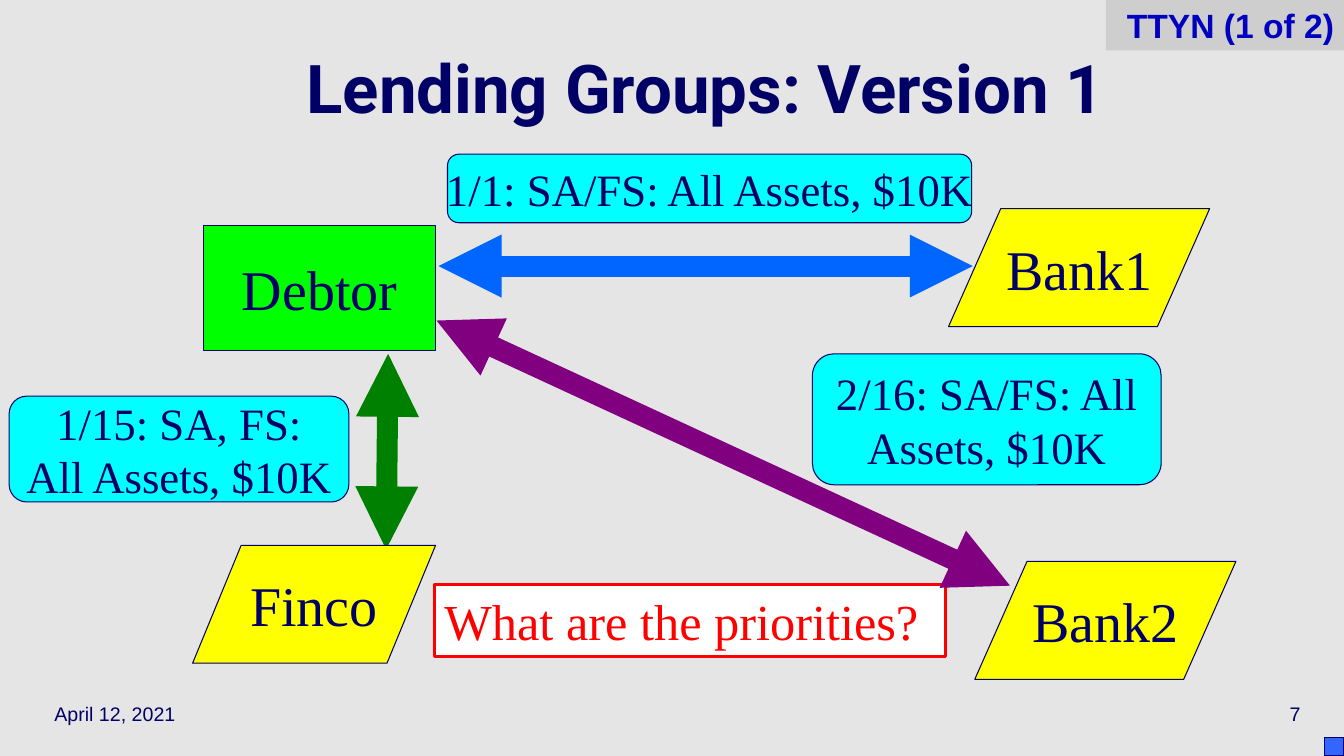
from lxml import etree
from pptx import Presentation
from pptx.dml.color import RGBColor
from pptx.enum import shapes, text
from pptx.oxml.ns import qn
from pptx.util import Inches, Pt

WIDTH, HEIGHT = Inches(13.333), Inches(7.5)
COLORS = {
    "background": "E5E5E5", "tab": "CECECE", "navy": "000066",
    "yellow": "FFFF00", "lime": "00FF00", "cyan": "00FFFF",
    "white": "FFFFFF", "red": "FF0000", "corner": "3366FF",
    "blue": "0066FF", "purple": "800080", "green": "008000",
    "tab text": "0000C0",
}
SERIF, SANS, TITLE = "Times New Roman", "Arial", "Roboto"
LEFT, CENTER, RIGHT = text.PP_ALIGN.LEFT, text.PP_ALIGN.CENTER, text.PP_ALIGN.RIGHT
PARTY_SHAPE = shapes.MSO_SHAPE.FLOWCHART_DATA
LOAN_SHAPE = shapes.MSO_SHAPE.FLOWCHART_ALTERNATE_PROCESS
RECTANGLE = shapes.MSO_SHAPE.RECTANGLE


def color(name):
    return RGBColor.from_string(COLORS[name])


def place(left, top):
    """Turn percentages of the slide's width and height into lengths."""
    return round(WIDTH * left / 100), round(HEIGHT * top / 100)


def write(shape, words, size, font=SERIF, ink="navy", align=CENTER, bold=False, wrap=True):
    frame = shape.text_frame
    frame.word_wrap = wrap
    frame.vertical_anchor = text.MSO_ANCHOR.MIDDLE
    paragraph = frame.paragraphs[0]
    paragraph.alignment = align
    run = paragraph.add_run()
    run.text = words
    run.font.name, run.font.size, run.font.bold = font, Pt(size), bold
    run.font.color.rgb = color(ink)
    return paragraph


def add_label(slide, box, words, size, font, **style):
    label = slide.shapes.add_textbox(*place(*box[:2]), *place(*box[2:]))
    return write(label, words, size, font, **style)


def add_box(slide, kind, box, fill, line="navy", weight=0.75):
    shape = slide.shapes.add_shape(kind, *place(*box[:2]), *place(*box[2:]))
    shape.shadow.inherit = False
    shape.fill.solid()
    shape.fill.fore_color.rgb = color(fill)
    if line:
        shape.line.color.rgb = color(line)
        shape.line.width = Pt(weight)
    else:
        shape.line.fill.background()
    return shape


def add_party(slide, box, name, kind=PARTY_SHAPE, fill="yellow"):
    write(add_box(slide, kind, box, fill), name, 40, wrap=False)


def add_loan(slide, box, terms, wrap=True):
    write(add_box(slide, LOAN_SHAPE, box, "cyan"), terms, 32, wrap=wrap)


def add_double_arrow(slide, start, end, ink):
    arrow = slide.shapes.add_connector(
        shapes.MSO_CONNECTOR.STRAIGHT, *place(*start), *place(*end))
    arrow.line.color.rgb = color(ink)
    arrow.line.width = Pt(15)
    line = arrow.line._get_or_add_ln()
    for tag in ("a:headEnd", "a:tailEnd"):
        etree.SubElement(line, qn(tag)).set("type", "triangle")
    etree.SubElement(arrow._element.spPr, qn("a:effectLst"))


def main():
    presentation = Presentation()
    presentation.slide_width, presentation.slide_height = WIDTH, HEIGHT
    slide = presentation.slides.add_slide(presentation.slide_layouts[6])
    slide.background.fill.solid()
    slide.background.fill.fore_color.rgb = color("background")

    add_label(slide, (3.3, 91.07, 20.85, 6.67), "April 12, 2021", 14, SANS, align=LEFT)
    add_label(slide, (76.65, 91.07, 20.85, 6.67), "7", 14, SANS, align=RIGHT)
    title = add_label(slide, (6.68, 4.4, 91.65, 16.67), "Lending Groups: Version 1",
                      48, TITLE, bold=True)
    title.line_spacing = 0.7

    add_party(slide, (70.58, 27.6, 19.43, 15.6), "Bank1")
    add_party(slide, (15.15, 29.87, 17.25, 16.53), "Debtor",
              shapes.MSO_SHAPE.FLOWCHART_PROCESS, "lime")
    question = add_box(slide, RECTANGLE, (32.33, 77.33, 38.03, 9.47), "white", "red", 2)
    write(question, "What are the priorities?", 36, ink="red", align=LEFT)

    add_double_arrow(slide, (32.63, 35.2), (72.38, 35.2), "blue")
    add_loan(slide, (33.3, 20.4, 39, 9.07), "1/1: SA/FS: All Assets, $10K", wrap=False)
    add_box(slide, RECTANGLE, (98.55, 97.6, 1.45, 2.4), "corner")

    add_party(slide, (72.53, 74.27, 19.43, 15.6), "Bank2")
    add_double_arrow(slide, (32.48, 42.4), (75.15, 77.47), "purple")
    add_loan(slide, (60.45, 46.8, 25.95, 17.33), "2/16: SA/FS: All Assets, $10K")

    add_double_arrow(slide, (28.88, 46.8), (28.73, 72.67), "green")
    add_loan(slide, (0.68, 52.4, 25.28, 14), "1/15: SA, FS: All Assets, $10K")
    add_party(slide, (14.33, 72.13, 18.08, 15.6), "Finco")

    tab = add_box(slide, RECTANGLE, (82.28, 0, 17.72, 6.67), "tab", line=None)
    write(tab, "TTYN (1 of 2)", 24, SANS, "tab text", RIGHT, bold=True)

    presentation.save("out.pptx")


if __name__ == "__main__":
    main()
